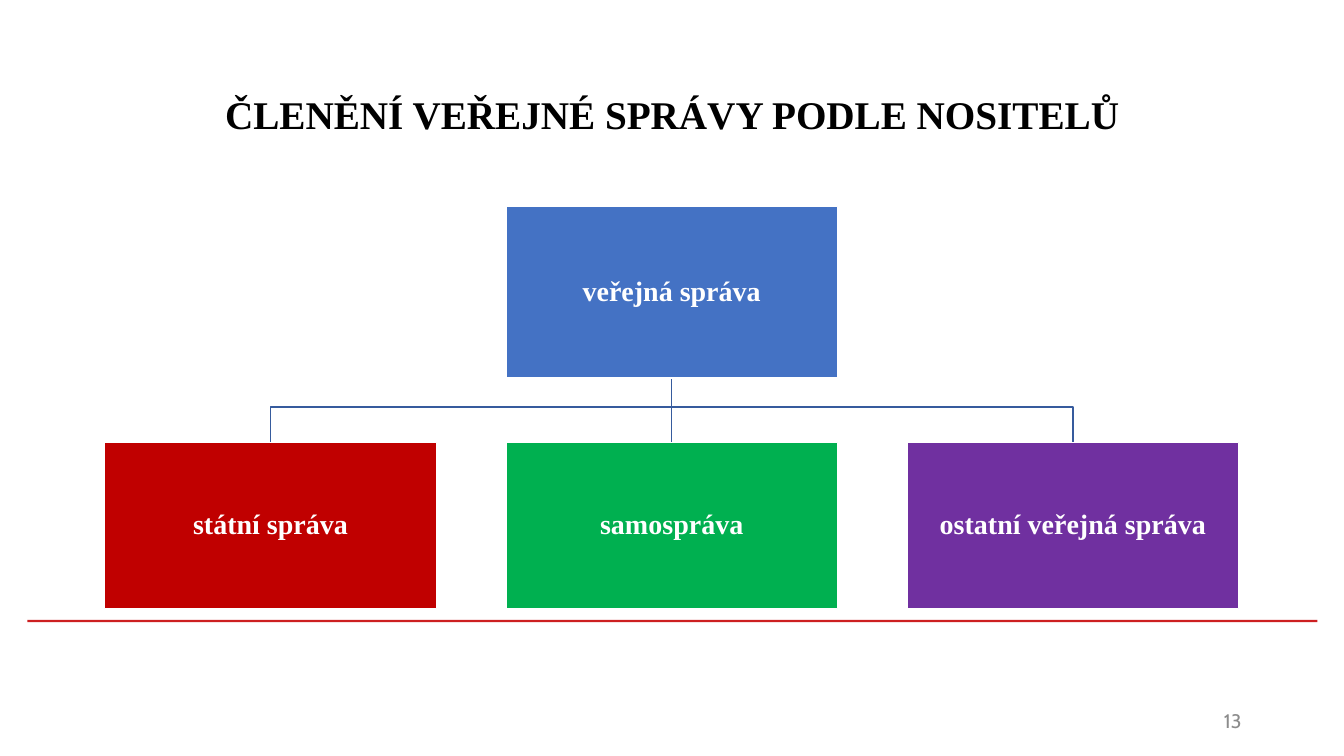
from dataclasses import dataclass

import pptx
import pptx.dml.color
import pptx.enum.shapes
import pptx.enum.text
import pptx.oxml
import pptx.util

Cm, Pt = pptx.util.Cm, pptx.util.Pt
Align = pptx.enum.text.PP_ALIGN
Shape = pptx.enum.shapes.MSO_SHAPE


def color(code):
    return pptx.dml.color.RGBColor.from_string(code)


@dataclass(frozen=True)
class Theme:
    serif: str = "Times New Roman"
    sans: str = "Cabin"
    ink: str = "000000"
    paper: str = "FFFFFF"
    gray: str = "8C8C8C"
    rule: str = "CD1F21"
    link: str = "365B9D"
    blue: str = "4472C4"
    red: str = "C00000"
    green: str = "00B050"
    purple: str = "7030A0"
    head: int = 28
    label: int = 20
    small: int = 14


class Chart:
    """Draws the parts of an organisation chart; all lengths are in cm."""

    def __init__(self, slide, theme):
        self.slide = slide
        self.shapes = slide.shapes
        self.theme = theme

    def letter(self, shape, text, tint, size, font, align=Align.CENTER, bold=True, inset=None):
        frame = shape.text_frame
        frame.text = text
        form = {"word_wrap": True, "auto_size": pptx.enum.text.MSO_AUTO_SIZE.NONE,
                "vertical_anchor": pptx.enum.text.MSO_ANCHOR.MIDDLE}
        if inset is not None:
            for side in ("left", "right", "top", "bottom"):
                form[f"margin_{side}"] = Cm(inset)
        for name, value in form.items():
            setattr(frame, name, value)
        line = frame.paragraphs[0]
        line.alignment = align
        for name, value in {"name": font, "size": Pt(size), "bold": bold}.items():
            setattr(line.font, name, value)
        line.font.color.rgb = color(tint)
        return line

    def title(self, text, *place):
        shape = self.shapes.title
        for name, value in zip(("left", "top", "width", "height"), place):
            setattr(shape, name, Cm(value))
        self.letter(shape, text, self.theme.ink, self.theme.head, self.theme.serif)

    def number(self, text, *place):
        shape = self.shapes.add_textbox(*map(Cm, place))
        self.letter(shape, text, self.theme.gray, self.theme.small, self.theme.sans,
                    Align.RIGHT, False)

    def block(self, fill, *place):
        shape = self.shapes.add_shape(Shape.RECTANGLE, *map(Cm, place))
        shape.shadow.inherit = False
        shape.fill.solid()
        shape.fill.fore_color.rgb = color(fill)
        shape.line.fill.background()
        return shape

    def box(self, text, fill, *place):
        shape = self.block(fill, *place)
        self.stroke(shape.line, self.theme.paper)
        line = self.letter(shape, text, self.theme.paper, self.theme.label,
                           self.theme.serif, inset=0.03)
        line.line_spacing = 0.9

    def stroke(self, line, tint):
        line.color.rgb = color(tint)
        line.width = Pt(1)

    def stem(self, x, top, low):
        kind = pptx.enum.shapes.MSO_CONNECTOR.STRAIGHT
        line = self.shapes.add_connector(kind, Cm(x), Cm(top), Cm(x), Cm(low))
        self.stroke(line.line, self.theme.link)
        tag = pptx.oxml.ns.qn("a:effectLst")
        line._element.spPr.append(line._element.makeelement(tag, {}))

    def elbow(self, start, end, bend):
        """Joins two points through a level run at height bend."""
        spots = [(start[0], bend), (end[0], bend), end]
        route = self.shapes.build_freeform(*map(Cm, start))
        route.add_line_segments([(Cm(x), Cm(y)) for x, y in spots], close=False)
        shape = route.convert_to_shape()
        shape.shadow.inherit = False
        shape.fill.background()
        self.stroke(shape.line, self.theme.link)


def main():
    deck = pptx.Presentation()
    deck.slide_width, deck.slide_height = Cm(33.87), Cm(19.05)
    theme = Theme()
    chart = Chart(deck.slides.add_slide(deck.slide_layouts[5]), theme)

    chart.block(theme.rule, 0.69, 15.62, 32.51, 0.06)
    chart.title("ČLENĚNÍ VEŘEJNÉ SPRÁVY PODLE NOSITELŮ", 2.33, 1.02, 29.21, 3.68)
    chart.number("13", 23.92, 17.65, 7.62, 1.02)

    width, step, mid = 8.36, 10.11, 16.93
    root, tall = 5.21, 4.32
    row, low = 11.15, 4.19
    base, bend = root + tall, 10.26
    parts = [("státní správa", theme.red), ("samospráva", theme.green),
             ("ostatní veřejná správa", theme.purple)]
    spots = [mid + step * side for side in (-1, 0, 1)]

    for x in spots:
        if x == mid:
            chart.stem(mid, base, row)
        else:
            chart.elbow((mid, base), (x, row), bend)
    chart.box("veřejná správa", theme.blue, mid - width / 2, root, width, tall)
    for x, (text, fill) in zip(spots, parts):
        chart.box(text, fill, x - width / 2, row, width, low)

    deck.save("out.pptx")


if __name__ == "__main__":
    main()
